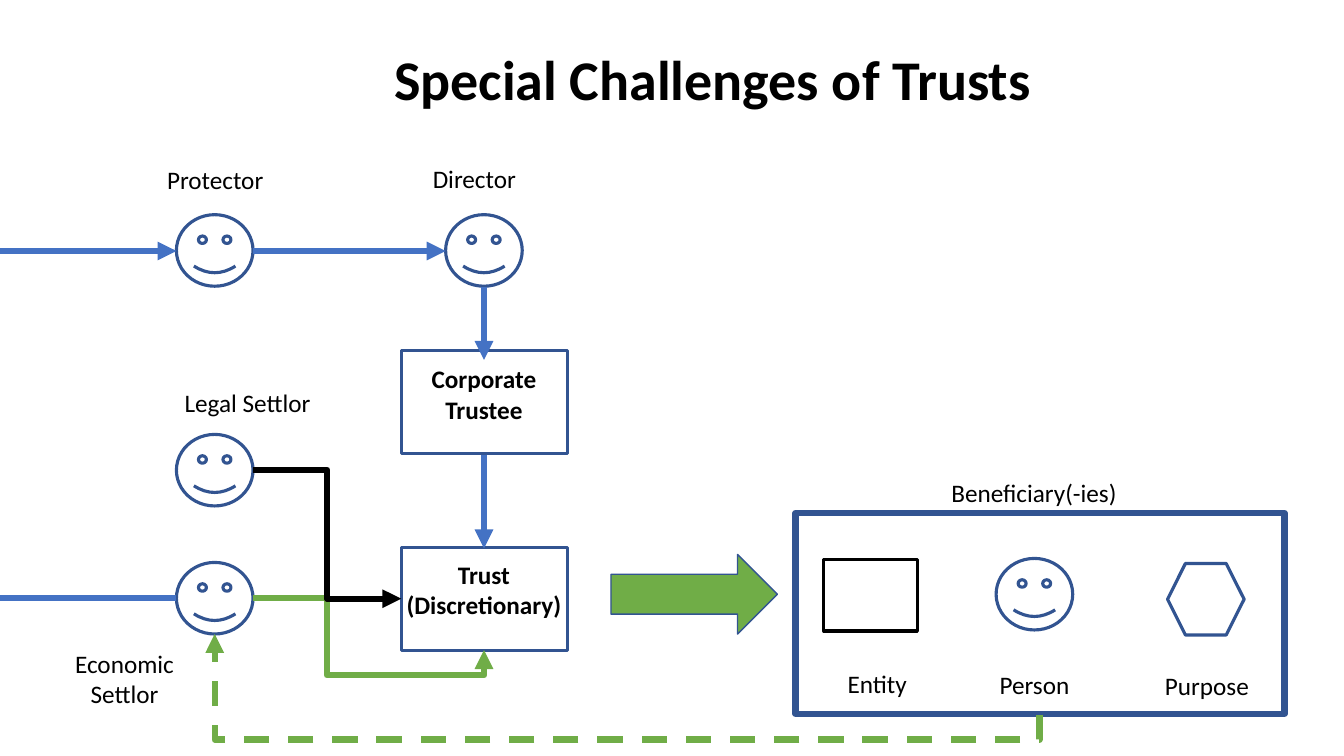
from lxml import etree
from pptx import Presentation
from pptx.dml.color import RGBColor
from pptx.enum.dml import MSO_LINE
from pptx.enum.shapes import MSO_CONNECTOR as Connector, MSO_SHAPE as Shape
from pptx.enum.text import MSO_ANCHOR as Anchor, MSO_AUTO_SIZE as AutoSize, PP_ALIGN as Align
from pptx.oxml.ns import qn
from pptx.util import Inches, Pt

COLORS = {"black": "000000", "outline": "325491", "blue": "4472C4", "green": "70AD47"}
FACE_WIDTH, FACE_HEIGHT = 7.6, 7.1
BOX_WIDTH, BOX_HEIGHT = 16.5, 10.2
LABEL_WIDTH = 18.5


def color(name):
    return RGBColor.from_string(COLORS[name])


def cells(*counts):
    """Lengths on a grid whose columns and rows are a tenth of an inch."""
    return [Inches(count / 10) for count in counts]


class TrustDiagram:
    font_name = "Calibri"

    def __init__(self, presentation):
        self.slide = presentation.slides.add_slide(presentation.slide_layouts[5])
        self.shapes = self.slide.shapes

    def style_text(self, frame, text, size, bold, align):
        frame.text = text
        frame.vertical_anchor = Anchor.TOP
        for paragraph in frame.paragraphs:
            paragraph.alignment = align
            font = paragraph.font
            font.name, font.size, font.bold = self.font_name, Pt(size), bold
            font.color.rgb = color("black")

    def title(self, text, left, top, width, height):
        title = self.shapes.title
        title.left, title.top, title.width, title.height = cells(left, top, width, height)
        title.text_frame.auto_size = AutoSize.NONE
        title.text_frame.word_wrap = False
        self.style_text(title.text_frame, text, 40, True, Align.LEFT)

    def label(self, text, center, top, height=4, width=LABEL_WIDTH, bold=False):
        box = self.shapes.add_textbox(*cells(center - width / 2, top, width, height))
        box.text_frame.word_wrap = True
        self.style_text(box.text_frame, text, 18, bold, Align.CENTER)

    def shape(self, kind, left, top, width, height, line="outline", weight=2.25, fill=None):
        shape = self.shapes.add_shape(kind, *cells(left, top, width, height))
        shape.shadow.inherit = False
        if fill:
            shape.fill.solid()
            shape.fill.fore_color.rgb = color(fill)
        else:
            shape.fill.background()
        shape.line.color.rgb = color(line)
        shape.line.width = Pt(weight)

    def face(self, left, top):
        self.shape(Shape.SMILEY_FACE, left, top, FACE_WIDTH, FACE_HEIGHT)

    def connector(self, start, end, line, kind=Connector.STRAIGHT, arrow=True):
        connector = self.shapes.add_connector(kind, *cells(*start, *end))
        connector.line.color.rgb = color(line)
        connector.line.width = Pt(4.5)
        properties = connector._element.spPr
        etree.SubElement(properties, qn("a:effectLst"))
        if arrow:
            outline = properties.find(qn("a:ln"))
            etree.SubElement(outline, qn("a:tailEnd"), type="triangle")
        return connector

    def elbow(self, start, end, line, preset="bentConnector3", bends=()):
        """Bent arrow; bends are shares of its width and height in turn."""
        connector = self.connector(start, end, line, Connector.ELBOW)
        geometry = connector._element.spPr.find(qn("a:prstGeom"))
        geometry.set("prst", preset)
        guides = geometry.find(qn("a:avLst"))
        for number, share in enumerate(bends, 1):
            etree.SubElement(guides, qn("a:gd"), name=f"adj{number}",
                             fmla=f"val {round(share * 100000)}")
        return connector

    def return_path(self, start, end, line, bend):
        """Dashed elbow that leaves downwards and ends up and to the left."""
        across, rise = start[0] - end[0], start[1] - end[1]
        left = (start[0] + end[0] - rise) / 2
        top = (start[1] + end[1] - across) / 2
        connector = self.elbow((left, top), (left + rise, top + across), line, bends=[bend])
        connector.line.dash_style = MSO_LINE.DASH
        transform = connector._element.spPr.find(qn("a:xfrm"))
        transform.set("rot", str(90 * 60000))
        transform.set("flipH", "1")


def main():
    presentation = Presentation()
    presentation.slide_width, presentation.slide_height = Inches(13.33), Inches(7.5)
    diagram = TrustDiagram(presentation)
    diagram.title("Special Challenges of Trusts", 38.1, 3.9, 65.9, 7.7)

    box_left, box_center = 39.8, 48
    for text, top, text_top in [("Corporate Trustee", 34.8, 35.6),
                                ("Trust (Discretionary)", 54.3, 55)]:
        diagram.shape(Shape.RECTANGLE, box_left, top, BOX_WIDTH, BOX_HEIGHT)
        diagram.label(text, box_center, text_top, height=7.1, width=18.3, bold=True)

    party_left = 17.5
    party_right = party_left + FACE_WIDTH
    upper, legal, economic = 21.3, 43.1, 55.8
    for left, top in [(party_left, upper), (44.2, upper), (party_left, legal),
                      (party_left, economic), (98.8, 55.4)]:
        diagram.face(left, top)
    diagram.shape(Shape.RECTANGLE, 81.7, 55.5, 9.3, 7.1, line="black")
    diagram.shape(Shape.HEXAGON, 115.8, 55.9, FACE_WIDTH, FACE_HEIGHT)
    diagram.shape(Shape.RIGHT_ARROW, 60.6, 55, BOX_WIDTH, 7.9, weight=1, fill="green")

    for text, center, top in [("Protector", 21.35, 15.8), ("Director", 47.05, 15.7),
                              ("Legal Settlor", 24.55, 37.9),
                              ("Beneficiary(-ies)", 102.55, 46.9),
                              ("Entity", 87, 65.8), ("Person", 102.6, 65.9),
                              ("Purpose", 119.7, 66)]:
        diagram.label(text, center, top)
    diagram.label("Economic Settlor", 12.35, 63.8, height=7.1)

    diagram.elbow((party_right, 59.3), (box_center, 64.5), "green",
                  "bentConnector4", [0.32, 1.48])
    diagram.elbow((party_right, 46.6), (box_left, 59.4), "black")
    diagram.connector((party_right, 24.9), (44.2, 24.9), "blue")
    diagram.connector((box_center, 28.5), (box_center, 35.7), "blue")
    diagram.connector((box_center, 45.1), (box_center, 54.4), "blue")
    diagram.connector((0, 24.9), (party_left, 24.9), "blue")
    diagram.connector((0, 59.3), (party_left, 59.3), "blue", arrow=False)

    diagram.shape(Shape.RECTANGLE, 78.9, 50.9, 48.5, 19.9, weight=4.5)
    diagram.return_path((103.1, 70.9), (21.3, 62.9), "green", -0.31)
    presentation.save("out.pptx")


if __name__ == "__main__":
    main()
